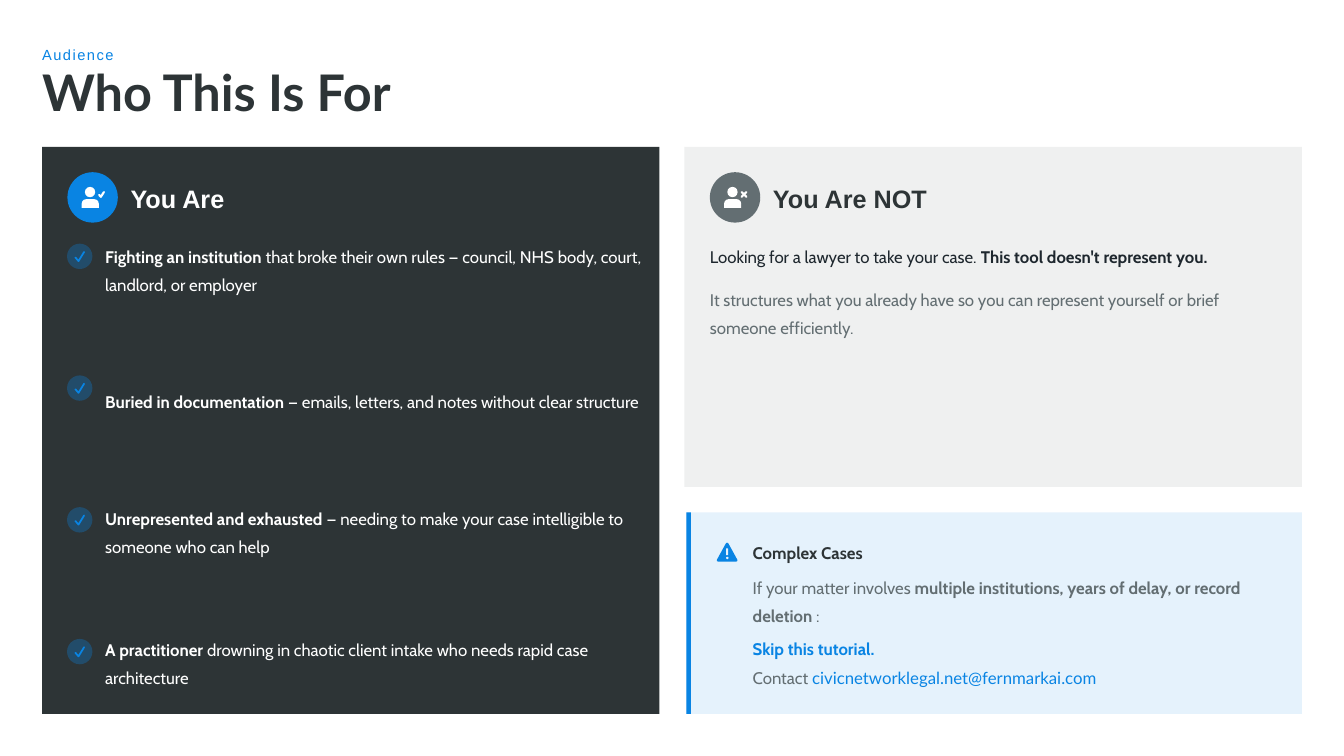
from dataclasses import dataclass

import pptx
import pptx.dml.color
import pptx.enum.shapes
import pptx.enum.text
import pptx.oxml
import pptx.oxml.ns
import pptx.util

Cm = pptx.util.Cm
Pt = pptx.util.Pt
Preset = pptx.enum.shapes.MSO_SHAPE
Anchor = pptx.enum.text.MSO_ANCHOR


@dataclass(frozen=True)
class Theme:
    blue: str = "0984E3"
    dark: str = "2D3436"
    ink: str = "1E272E"
    grey: str = "636E72"
    white: str = "FFFFFF"
    pale: str = "E6F2FC"
    sans: str = "Arial"
    display: str = "Lato"
    reading: str = "Cabin"
    label_size: float = 10.5
    title_size: float = 36
    heading_size: float = 18
    body_size: float = 12


THEME = Theme()


@dataclass(frozen=True)
class Box:
    left: float
    top: float
    width: float
    height: float

    def lengths(self) -> list:
        return [Cm(n) for n in (self.left, self.top, self.width, self.height)]


@dataclass(frozen=True)
class Span:
    text: str
    colour: str
    bold: bool = False
    face: str = THEME.reading
    size: float = THEME.body_size
    tracking: int = 0


@dataclass(frozen=True)
class Para:
    spans: tuple
    spacing: float = 1.4
    gap: float = 0


@dataclass(frozen=True)
class Audience:
    heading: str
    panel: Box
    fill: str
    opacity: int
    badge: str
    heading_colour: str
    mark: str
    body: Box
    paras: tuple


def rgb(colour: str):
    return pptx.dml.color.RGBColor.from_string(colour)


def add_block(page, kind, box: Box, colour: str, opacity: int = 100):
    shape = page.shapes.add_shape(kind, *box.lengths())
    shape.shadow.inherit = False
    shape.fill.solid()
    shape.fill.fore_color.rgb = rgb(colour)
    shape.line.fill.background()
    if opacity < 100:
        tint = shape.element.spPr.find(".//" + pptx.oxml.ns.qn("a:srgbClr"))
        alpha = pptx.oxml.parse_xml(f'<a:alpha {pptx.oxml.ns.nsdecls("a")} val="{opacity * 1000}"/>')
        tint.append(alpha)
    return shape


def add_stroke(page, box: Box, strokes: tuple, colour: str, weight: float) -> None:
    paths = [[(Cm(box.left + x * box.width), Cm(box.top + y * box.height)) for x, y in stroke]
             for stroke in strokes]
    builder = page.shapes.build_freeform(*paths[0][0])
    for index, points in enumerate(paths):
        if index:
            builder.move_to(*points[0])
        builder.add_line_segments(points[1:], close=False)
    shape = builder.convert_to_shape()
    shape.shadow.inherit = False
    shape.fill.background()
    shape.line.color.rgb = rgb(colour)
    shape.line.width = Pt(weight)
    shape.element.spPr.find(pptx.oxml.ns.qn("a:ln")).set("cap", "rnd")


MARKS = {"tick": (((0, 0.6), (0.36, 1), (1, 0)),),
         "cross": (((0, 0), (1, 1)), ((1, 0), (0, 1)))}


def write(shape, paras: tuple, anchor=Anchor.TOP) -> None:
    frame = shape.text_frame
    frame.word_wrap = True
    frame.auto_size = pptx.enum.text.MSO_AUTO_SIZE.NONE
    frame.vertical_anchor = anchor
    frame.margin_left = frame.margin_right = frame.margin_top = frame.margin_bottom = 0
    for index, entry in enumerate(paras):
        para = frame.add_paragraph() if index else frame.paragraphs[0]
        properties = para._p.get_or_add_pPr()
        properties.set("marL", "0")
        properties.set("indent", "0")
        properties.append(pptx.oxml.parse_xml(f'<a:buNone {pptx.oxml.ns.nsdecls("a")}/>'))
        para.alignment = pptx.enum.text.PP_ALIGN.LEFT
        para.line_spacing = entry.spacing
        para.space_before = Pt(entry.gap)
        para.space_after = Pt(0)
        for item in entry.spans:
            span = para.add_run()
            span.text = item.text
            span.font.name = item.face
            span.font.size = Pt(item.size)
            span.font.bold = item.bold
            span.font.color.rgb = rgb(item.colour)
            if item.tracking:
                span.font._element.set("spc", str(item.tracking))


def fill_placeholder(page, index: int, box: Box, paras: tuple, anchor=Anchor.TOP) -> None:
    holder = next(item for item in page.placeholders if item.placeholder_format.idx == index)
    holder.left, holder.top, holder.width, holder.height = box.lengths()
    write(holder, paras, anchor)
    page.shapes.element.append(holder.element)


def add_text(page, box: Box, paras: tuple, anchor=Anchor.TOP) -> None:
    write(page.shapes.add_textbox(*box.lengths()), paras, anchor)


def add_audience(page, audience: Audience, index: int) -> None:
    panel = audience.panel
    left, top = panel.left + 0.64, panel.top + 0.64
    add_block(page, Preset.RECTANGLE, panel, audience.fill, audience.opacity)
    add_block(page, Preset.OVAL, Box(left, top, 1.27, 1.27), audience.badge)
    add_block(page, Preset.OVAL, Box(left + 0.44, top + 0.37, 0.26, 0.26), THEME.white)
    shoulders = add_block(page, Preset.ROUND_2_SAME_RECTANGLE,
                          Box(left + 0.36, top + 0.68, 0.43, 0.22), THEME.white)
    shoulders.adjustments[0] = 0.5
    add_stroke(page, Box(left + 0.8, top + 0.5, 0.12, 0.12), MARKS[audience.mark], THEME.white, 1.5)
    heading = Span(audience.heading, audience.heading_colour, True, THEME.sans, THEME.heading_size)
    fill_placeholder(page, index, Box(left + 1.59, top + 0.2, 8, 0.85),
                     (Para((heading,), 1.1),), Anchor.MIDDLE)
    fill_placeholder(page, index + 1, audience.body, audience.paras)


def need(lead: str, rest: str, gap: float = 0) -> Para:
    return Para((Span(lead, THEME.white, True), Span(rest, THEME.white)), gap=gap)


NEEDS = (
    need("Fighting an institution",
         " that broke their own rules — council, NHS body, court, landlord, or employer"),
    need("Buried in documentation", " — emails, letters, and notes without clear structure", 63.4),
    need("Unrepresented and exhausted",
         " — needing to make your case intelligible to someone who can help", 63.4),
    need("A practitioner", " drowning in chaotic client intake who needs rapid case architecture", 53.2),
)
LIMITS = (
    Para((Span("Looking for a lawyer to take your case. ", THEME.ink),
          Span("This tool doesn't represent you.", THEME.ink, True))),
    Para((Span("It structures what you already have so you can represent yourself "
               "or brief someone efficiently.", THEME.grey),), gap=10.5),
)
COMPLEX_CASES = (
    Para((Span("Complex Cases", THEME.dark, True),), 1.3),
    Para((Span("If your matter involves ", THEME.grey),
          Span("multiple institutions, years of delay, or record deletion", THEME.grey, True),
          Span(" :", THEME.grey)), gap=5),
    Para((Span("Skip this tutorial.", THEME.blue, True),), 1.3, 4.4),
    Para((Span("Contact ", THEME.grey),
          Span("civicnetworklegal.net@fernmarkai.com", THEME.blue, face=THEME.display)), 1.3, 2),
)
AUDIENCES = (
    Audience("You Are", Box(1.06, 3.7, 15.56, 14.29), THEME.dark, 100, THEME.blue, THEME.white,
             "tick", Box(2.65, 6.01, 13.54, 11.6), NEEDS),
    Audience("You Are NOT", Box(17.25, 3.7, 15.56, 8.57), THEME.grey, 10, THEME.grey, THEME.dark,
             "cross", Box(17.89, 6.02, 14.5, 2.6), LIMITS),
)


def add_callout(page) -> None:
    add_block(page, Preset.RECTANGLE, Box(17.3, 12.91, 15.51, 5.08), THEME.blue, 10)
    add_block(page, Preset.RECTANGLE, Box(17.3, 12.91, 0.11, 5.08), THEME.blue)
    triangle = add_block(page, Preset.ISOSCELES_TRIANGLE, Box(18.1, 13.71, 0.45, 0.41), THEME.blue)
    triangle.line.color.rgb = rgb(THEME.blue)
    triangle.line.width = Pt(2)
    add_block(page, Preset.ROUNDED_RECTANGLE, Box(18.3, 13.82, 0.05, 0.17), THEME.pale)
    add_block(page, Preset.OVAL, Box(18.3, 14.03, 0.06, 0.06), THEME.pale)
    add_text(page, Box(18.97, 13.52, 13.41, 4.1), COMPLEX_CASES)


def main() -> None:
    deck = pptx.Presentation()
    deck.slide_width, deck.slide_height = Cm(33.87), Cm(19.05)
    page = deck.slides.add_slide(deck.slide_layouts.get_by_name("Comparison"))
    label = Span("Audience", THEME.blue, False, THEME.sans, THEME.label_size, 110)
    add_text(page, Box(1.06, 1.06, 31.93, 0.53), (Para((label,), 1.2),), Anchor.MIDDLE)
    title = Span("Who This Is For", THEME.dark, True, THEME.display, THEME.title_size)
    fill_placeholder(page, 0, Box(1.06, 1.8, 32.39, 1.27), (Para((title,), 0.8),), Anchor.MIDDLE)
    for order, audience in enumerate(AUDIENCES):
        add_audience(page, audience, 1 + 2 * order)
    for row in range(len(NEEDS)):
        top = 6.14 + 3.32 * row
        add_block(page, Preset.OVAL, Box(1.69, top, 0.64, 0.64), THEME.blue, 30)
        add_stroke(page, Box(1.9, top + 0.21, 0.22, 0.23), MARKS["tick"], THEME.blue, 1.25)
    add_callout(page)
    deck.save("out.pptx")


if __name__ == "__main__":
    main()
